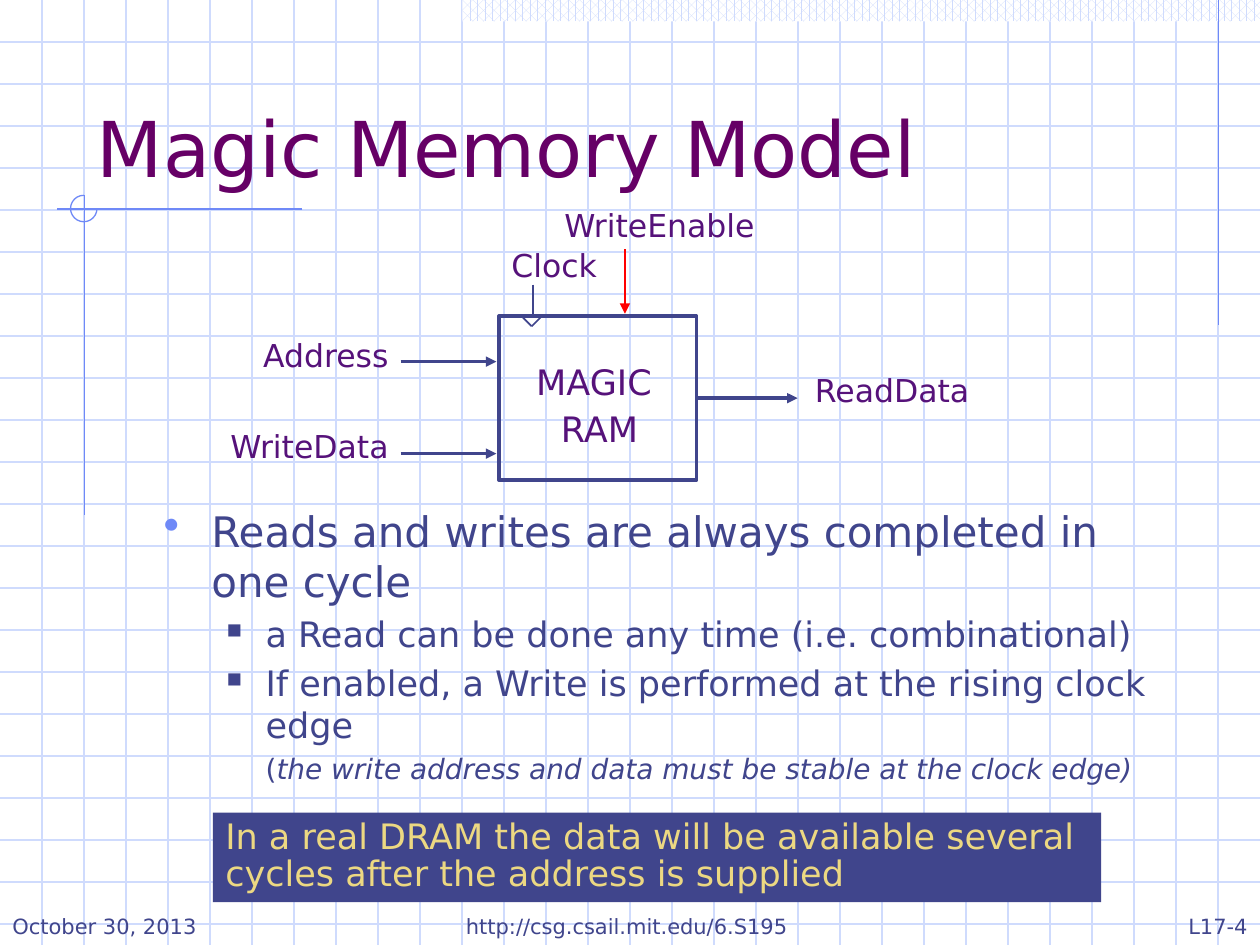
from lxml.etree import SubElement
from pptx import Presentation
from pptx.dml.color import RGBColor
from pptx.enum.dml import MSO_PATTERN
from pptx.enum.shapes import MSO_CONNECTOR, MSO_SHAPE
from pptx.enum.text import MSO_ANCHOR, PP_ALIGN
from pptx.oxml.ns import qn
from pptx.util import Inches, Pt

FONT = "DejaVu Sans"
WHITE = RGBColor(0xFF, 0xFF, 0xFF)
PALE = RGBColor(0xCF, 0xDB, 0xFD)
SKY = RGBColor(0x6F, 0x89, 0xF7)
NAVY = RGBColor(0x40, 0x45, 0x8C)
PURPLE = RGBColor(0x56, 0x12, 0x7A)
PLUM = RGBColor(0x66, 0x00, 0x66)
RED = RGBColor(0xFF, 0x00, 0x00)
GOLD = RGBColor(0xEC, 0xD8, 0x82)


def add_line(slide, start, end, color, width, arrow=False):
    line = slide.shapes.add_connector(MSO_CONNECTOR.STRAIGHT, *start, *end)
    line.line.color.rgb = color
    line.line.width = Pt(width)
    if arrow:
        SubElement(line.line._get_or_add_ln(), qn("a:tailEnd"), type="triangle")
    SubElement(line._element.spPr, qn("a:effectLst"))
    return line


def add_shape(slide, kind, box):
    shape = slide.shapes.add_shape(kind, *box)
    shape.shadow.inherit = False
    shape.fill.background()
    shape.line.fill.background()
    return shape


def add_run(paragraph, text, size, color, italic=None):
    run = paragraph.add_run()
    run.text = text
    run.font.name = FONT
    run.font.size = Pt(size)
    run.font.color.rgb = color
    run.font.italic = italic


def fill_text(shape, lines, size, color, align=PP_ALIGN.LEFT, anchor=MSO_ANCHOR.TOP,
              wrap=True, spacing=None):
    frame = shape.text_frame
    frame.word_wrap = wrap
    frame.vertical_anchor = anchor
    for index, text in enumerate(lines):
        paragraph = frame.add_paragraph() if index else frame.paragraphs[0]
        paragraph.alignment = align
        paragraph.line_spacing = spacing
        if index:
            paragraph.space_before = Pt(size / 4)
        add_run(paragraph, text, size, color)


def add_text(slide, box, lines, size, color, **layout):
    fill_text(slide.shapes.add_textbox(*box), lines, size, color, **layout)


def add_grid(slide, left, top, width, height):
    step = Inches(1) // 3
    for y in range(top + step, top + height - step // 4, step):
        add_line(slide, (left, y), (left + width, y), PALE, 0.75)
    for x in range(left + step, left + width - step // 4, step):
        add_line(slide, (x, top), (x, top + height), PALE, 0.75)


def add_backdrop(slide, left, top, width):
    def at(x, y):
        return left + Inches(x), top + Inches(y)

    band = add_shape(slide, MSO_SHAPE.RECTANGLE,
                     (*at(3.67, 0), width - Inches(3.67), Inches(0.17)))
    band.fill.patterned()
    band.fill.pattern = MSO_PATTERN.PERCENT_60
    band.fill.fore_color.rgb = PALE
    band.fill.back_color.rgb = WHITE
    for start, end in (((9.67, 0), (9.67, 2.58)),
                       ((2.4, 1.66), (0.45, 1.66)),
                       ((0.67, 1.55), (0.67, 4.09))):
        add_line(slide, at(*start), at(*end), SKY, 0.75)
    ring = add_shape(slide, MSO_SHAPE.ARC, (*at(0.56, 1.55), Inches(0.21), Inches(0.21)))
    ring.adjustments[0] = 0
    ring.adjustments[1] = 162
    ring.line.color.rgb = SKY
    ring.line.width = Pt(0.75)


def add_memory_diagram(slide, left, top):
    def at(x, y):
        return left + Inches(x), top + Inches(y)

    ram = add_shape(slide, MSO_SHAPE.RECTANGLE, (*at(2.23, 0.89), Inches(1.57), Inches(1.3)))
    ram.line.color.rgb = NAVY
    ram.line.width = Pt(2)

    read_arrow = add_line(slide, at(3.8, 1.54), at(4.6, 1.54), NAVY, 2, arrow=True)
    read_arrow.begin_connect(ram, 3)
    for y in (1.98, 1.25):
        add_line(slide, at(1.45, y), at(2.21, y), NAVY, 2, arrow=True)
    add_line(slide, at(3.23, 0.36), at(3.23, 0.87), RED, 1, arrow=True)
    for start, end in (((2.5, 0.64), (2.5, 0.88)),
                       ((2.42, 0.9), (2.49, 0.97)),
                       ((2.49, 0.97), (2.56, 0.9))):
        add_line(slide, at(*start), at(*end), NAVY, 1)

    add_text(slide, (*at(2.4, 1.23), Inches(1.17), Inches(0.79)), ["MAGIC", " RAM"], 20, PURPLE,
             align=PP_ALIGN.CENTER, wrap=False, spacing=0.9)
    for name, x, y, width in (("ReadData", 4.64, 1.31, 1.44),
                              ("WriteData", 0, 1.75, 1.47),
                              ("Address", 0.26, 1.03, 1.21),
                              ("WriteEnable", 2.65, 0, 1.72),
                              ("Clock", 2.23, 0.32, 0.88)):
        add_text(slide, (*at(x, y), Inches(width), Inches(0.37)), [name], 18, PURPLE,
                 wrap=False, spacing=0.9)


def set_bullet(paragraph, margin, indent, char=None, color=None, percent=100):
    props = paragraph._p.get_or_add_pPr()
    props.set("marL", str(Inches(margin)))
    props.set("indent", str(Inches(indent)))
    if char is None:
        SubElement(props, qn("a:buNone"))
        return
    SubElement(SubElement(props, qn("a:buClr")), qn("a:srgbClr"), val=str(color))
    SubElement(props, qn("a:buSzPct"), val=str(percent * 1000))
    SubElement(props, qn("a:buChar"), char=char)


def add_points(slide, box):
    top_bullet = (0.38, -0.38, "•", SKY, 110)
    sub_bullet = (0.81, -0.31, "■", NAVY, 60)
    points = (
        (top_bullet, 24, [("Reads and writes are always completed in one cycle", None)]),
        (sub_bullet, 20, [("a Read can be done any time (i.e. combinational)", None)]),
        (sub_bullet, 20, [("If enabled, a Write is performed at the rising clock edge", None)]),
        ((0.81, 0), 16, [
            ("(", None),
            ("the write address and data must be stable at the clock edge)", True)]),
    )
    frame = slide.shapes.add_textbox(*box).text_frame
    frame.word_wrap = True
    for index, (bullet, size, runs) in enumerate(points):
        paragraph = frame.add_paragraph() if index else frame.paragraphs[0]
        set_bullet(paragraph, *bullet)
        if index:
            paragraph.level = 1
            paragraph.space_before = Pt(size / 5)
        for text, italic in runs:
            add_run(paragraph, text, size, NAVY, italic)


def add_dram_note(slide, box):
    note = add_shape(slide, MSO_SHAPE.RECTANGLE, box)
    note.fill.solid()
    note.fill.fore_color.rgb = NAVY
    fill_text(note, ["In a real DRAM the data will be available several cycles "
                     "after the address is supplied"], 20, GOLD, spacing=0.9)


def add_footer(slide, left, top, width, height):
    side = Inches(2.08)
    for text, x, part_width, align in (
            ("October 30, 2013", 0, side, PP_ALIGN.LEFT),
            ("http://csg.csail.mit.edu/6.S195", Inches(3.39), Inches(3.17), PP_ALIGN.CENTER),
            ("L17-4", width - side, side, PP_ALIGN.RIGHT)):
        add_text(slide, (left + x, top, part_width, height), [text], 12, NAVY,
                 align=align, anchor=MSO_ANCHOR.BOTTOM)


def main():
    deck = Presentation()
    deck.slide_width, deck.slide_height = Inches(10), Inches(7.5)
    slide = deck.slides.add_slide(deck.slide_layouts[6])
    add_grid(slide, 0, 0, deck.slide_width, deck.slide_height)
    add_backdrop(slide, 0, 0, deck.slide_width)
    add_text(slide, (Inches(0.67), Inches(0.33), Inches(8.5), Inches(1.25)),
             ["Magic Memory Model"], 44, PLUM, anchor=MSO_ANCHOR.BOTTOM)
    add_points(slide, (Inches(1.2), Inches(3.96), Inches(8.14), Inches(2.43)))
    add_memory_diagram(slide, Inches(1.73), Inches(1.62))
    add_dram_note(slide, (Inches(1.69), Inches(6.45), Inches(7.05), Inches(0.71)))
    add_footer(slide, 0, Inches(7), deck.slide_width, Inches(0.5))
    deck.save("out.pptx")


if __name__ == "__main__":
    main()
